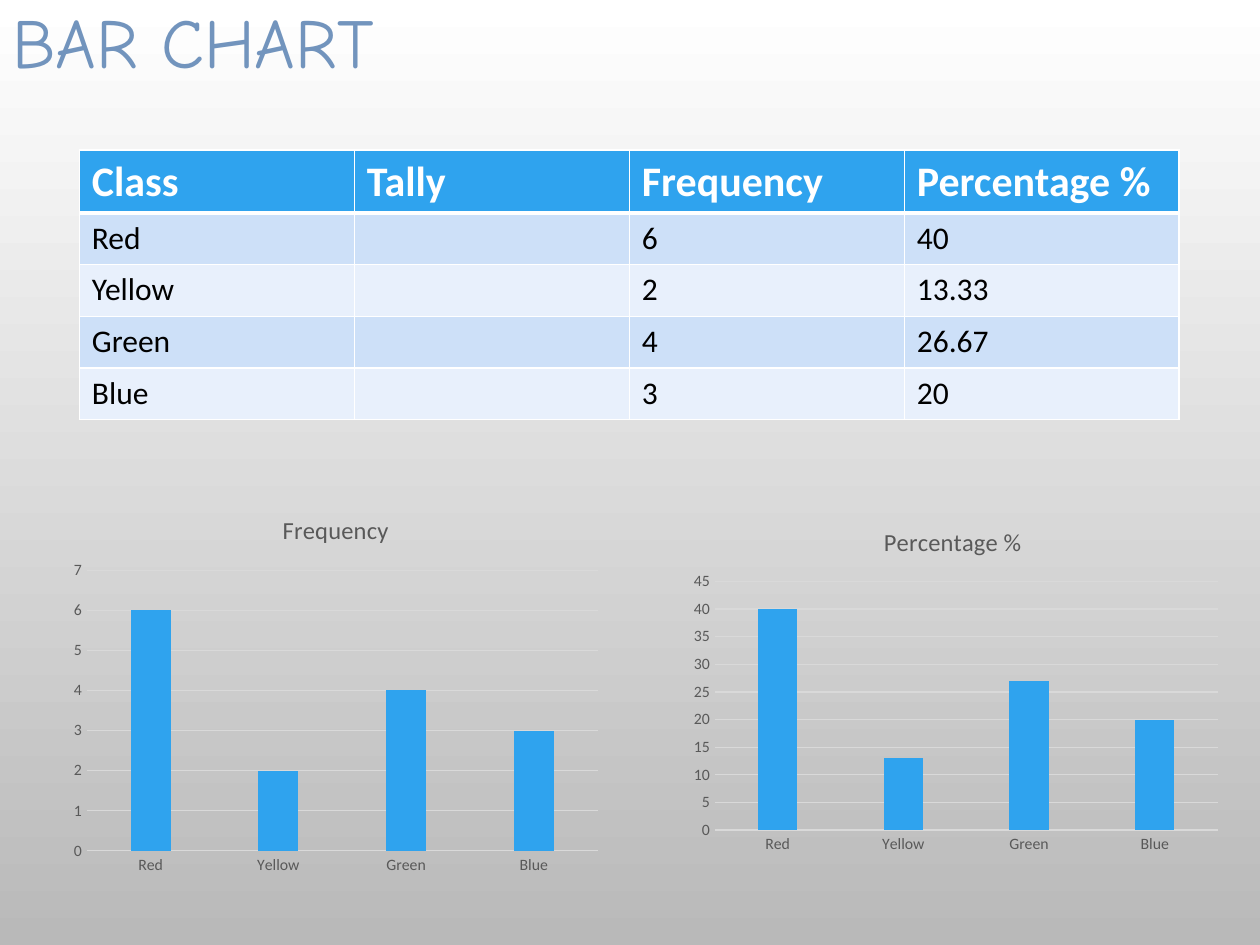
from dataclasses import dataclass

from lxml import etree
from pptx import Presentation
from pptx.chart.data import CategoryChartData
from pptx.dml.color import RGBColor
from pptx.enum.chart import XL_CHART_TYPE, XL_TICK_MARK
from pptx.enum.text import MSO_ANCHOR
from pptx.oxml.ns import qn
from pptx.util import Inches, Pt

COLUMN = XL_CHART_TYPE.COLUMN_CLUSTERED
NO_TICK = XL_TICK_MARK.NONE
MIDDLE = MSO_ANCHOR.MIDDLE

WHITE = RGBColor(0xFF, 0xFF, 0xFF)
BLACK = RGBColor(0, 0, 0)
SILVER = RGBColor(0xB9, 0xB9, 0xB9)
STEEL = RGBColor(0x72, 0x94, 0xBD)
BLUE = RGBColor(0x2F, 0xA3, 0xEE)
BANDS = (RGBColor(0xCD, 0xE0, 0xF8), RGBColor(0xE8, 0xF0, 0xFC))
GRAY = RGBColor(0x59, 0x59, 0x59)
PALE = RGBColor(0xD9, 0xD9, 0xD9)
BODY = "Calibri"

HEAD = ("Class", "Tally", "Frequency", "Percentage %")
ROWS = (
    ("Red", "", "6", "40"),
    ("Yellow", "", "2", "13.33"),
    ("Green", "", "4", "26.67"),
    ("Blue", "", "3", "20"),
)


@dataclass
class Graph:
    name: str
    column: int
    left: float
    top: float
    height: float
    peak: int
    step: int


GRAPHS = (
    Graph("Percentage % ", 3, 5.42, 4.02, 2.81, 45, 5),
    Graph("Frequency", 2, 0.5, 3.92, 3.08, 7, 1),
)


def style(font, size: float, color: RGBColor, name: str = BODY, bold: bool = False) -> None:
    font.size, font.name, font.bold = Pt(size), name, bold
    font.color.rgb = color


def write(frame, text: str, *look) -> None:
    run = frame.paragraphs[0].add_run()
    run.text = text
    style(run.font, *look)


def add_edges(cell, top: float, base: float) -> None:
    """Give a cell white borders, with its own widths at top and base."""
    props = cell._tc.get_or_add_tcPr()
    widths = {"lnL": 1, "lnR": 1, "lnT": top, "lnB": base}
    for spot, (tag, width) in enumerate(widths.items()):
        edge = etree.Element(qn(f"a:{tag}"), w=str(Pt(width)))
        fill = etree.SubElement(edge, qn("a:solidFill"))
        etree.SubElement(fill, qn("a:srgbClr"), val=str(WHITE))
        props.insert(spot, edge)


def add_grid(slide) -> None:
    frame = slide.shapes.add_table(
        len(ROWS) + 1, len(HEAD), Inches(0.63), Inches(1.19), Inches(8.73), Inches(2.12))
    table = frame.table
    for column in table.columns:
        column.width = Inches(8.73 / len(HEAD))
    for r, texts in enumerate((HEAD, *ROWS)):
        head = r == 0
        table.rows[r].height = Inches(0.5 if head else 0.41)
        for c, text in enumerate(texts):
            cell = table.cell(r, c)
            cell.fill.solid()
            cell.fill.fore_color.rgb = BLUE if head else BANDS[(r - 1) % 2]
            # The line under the header is thicker
            add_edges(cell, 3 if r == 1 else 1, 3 if head else 1)
            if text:
                look = (24, WHITE, BODY, True) if head else (18, BLACK)
                write(cell.text_frame, text, *look)


def add_graph(slide, graph: Graph) -> None:
    data = CategoryChartData()
    data.categories = [row[0] for row in ROWS]
    data.add_series(graph.name, [round(float(row[graph.column])) for row in ROWS])
    chart = slide.shapes.add_chart(
        COLUMN, Inches(graph.left), Inches(graph.top),
        Inches(4.33), Inches(graph.height), data).chart
    style(chart.font, 10, BLACK)
    chart.has_legend = False
    chart.has_title = True
    write(chart.chart_title.text_frame, graph.name, 14, GRAY)
    chart.chart_title.include_in_layout = False

    # Bars
    plot = chart.plots[0]
    plot.gap_width, plot.overlap = 219, -27
    plot.vary_by_categories = False
    fill = plot.series[0].format.fill
    fill.solid()
    fill.fore_color.rgb = BLUE

    # Axes
    cats, vals = chart.category_axis, chart.value_axis
    for axis in (cats, vals):
        axis.major_tick_mark = axis.minor_tick_mark = NO_TICK
        style(axis.tick_labels.font, 9, GRAY)
    vals.minimum_scale, vals.maximum_scale = 0, graph.peak
    vals.major_unit = graph.step
    vals.tick_labels.number_format = "General"
    vals.tick_labels.number_format_is_linked = False
    vals.format.line.fill.background()
    vals.has_major_gridlines = True
    for line in (cats.format.line, vals.major_gridlines.format.line):
        line.color.rgb, line.width = PALE, Pt(0.75)


def main() -> None:
    deck = Presentation()
    deck.slide_width, deck.slide_height = Inches(10), Inches(7.5)
    slide = deck.slides.add_slide(deck.slide_layouts[6])

    # Background
    fill = slide.background.fill
    fill.gradient()
    fill.gradient_angle = 270
    for stop, color in zip(fill.gradient_stops, (WHITE, SILVER)):
        stop.color.rgb = color

    # Title
    box = slide.shapes.add_textbox(Inches(0), Inches(-0.03), Inches(9), Inches(0.78))
    frame = box.text_frame
    frame.word_wrap, frame.vertical_anchor = True, MIDDLE
    frame.paragraphs[0].line_spacing = 0.9
    write(frame, "BAR CHART", 40, STEEL, "Comic Neue")

    # Charts and table
    for graph in GRAPHS:
        add_graph(slide, graph)
    add_grid(slide)
    deck.save("out.pptx")


if __name__ == "__main__":
    main()
